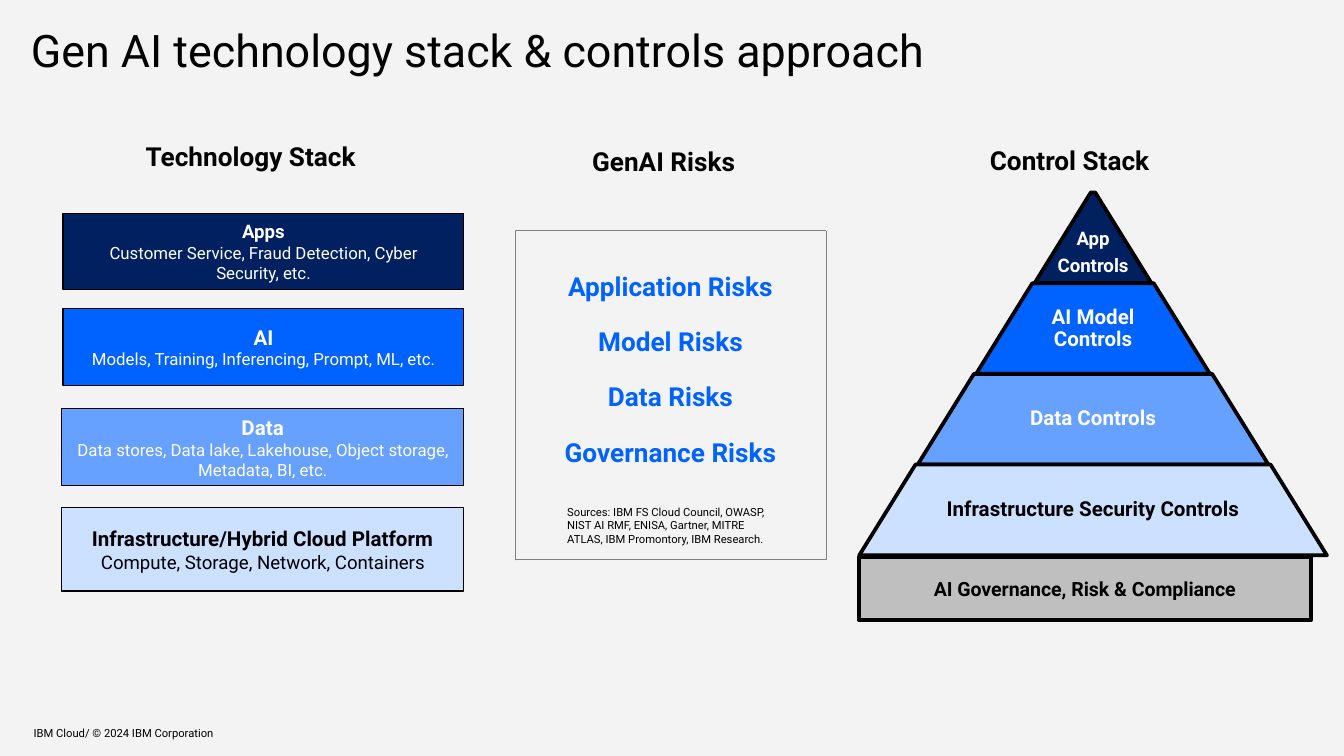
from collections import namedtuple
from pptx import Presentation
from pptx.dml.color import RGBColor
from pptx.enum.dml import MSO_LINE
from pptx.enum.shapes import MSO_SHAPE
from pptx.enum.text import MSO_ANCHOR, MSO_AUTO_SIZE, PP_ALIGN
from pptx.util import Inches, Pt

COLORS = {
    "background": "F3F3F3", "black": "000000", "white": "FFFFFF",
    "navy": "002060", "blue": "0062FF", "sky": "66A1FF", "pale": "CCE0FF",
    "silver": "BFBFBF", "gray": "808080",
}
COLUMNS, ROWS = 100, 56.25
CELL = Inches(0.1)
DEFAULT_INSETS = (1, 0.5, 1, 0.5)

Box = namedtuple("Box", "left top width height")
Line = namedtuple("Line", "text size color bold")


def color(name):
    """Return the named color."""
    return RGBColor.from_string(COLORS[name])


def within(box, left, top, width, height):
    """Return a box placed from the corner of another box."""
    return Box(box.left + left, box.top + top, width, height)


def emu(box):
    """Convert grid cells to slide lengths."""
    return [round(length * CELL) for length in box]


def write(shape, lines, align=PP_ALIGN.CENTER, anchor=MSO_ANCHOR.TOP,
          insets=DEFAULT_INSETS, line_spacing=None, space_after=None):
    """Write one paragraph for each line into a shape."""
    frame = shape.text_frame
    frame.word_wrap = True
    frame.auto_size = MSO_AUTO_SIZE.NONE
    frame.vertical_anchor = anchor
    (frame.margin_left, frame.margin_top,
     frame.margin_right, frame.margin_bottom) = emu(insets)
    for index, line in enumerate(lines):
        paragraph = frame.add_paragraph() if index else frame.paragraphs[0]
        paragraph.text = line.text
        paragraph.alignment = align
        paragraph.line_spacing = line_spacing
        paragraph.space_after = space_after
        paragraph.font.name = "Roboto"
        paragraph.font.size = Pt(line.size)
        paragraph.font.bold = line.bold
        paragraph.font.color.rgb = color(line.color)


def add_text(slide, box, lines, **options):
    """Add a text box."""
    write(slide.shapes.add_textbox(*emu(box)), lines, **options)


def add_block(slide, kind, box, fill, outline, weight):
    """Add an outlined shape, filled when a fill is named."""
    shape = slide.shapes.add_shape(kind, *emu(box))
    shape.shadow.inherit = False
    if fill:
        shape.fill.solid()
        shape.fill.fore_color.rgb = color(fill)
    else:
        shape.fill.background()
    shape.line.color.rgb = color(outline)
    shape.line.width = Pt(weight)
    return shape


def add_heading(slide, box, text):
    """Add a bold heading at the top of a region."""
    add_text(slide, within(box, 0, 0, 23.1, 3.4), [Line(text, 14, "black", True)],
             insets=(0, 0.5, 1, 0.5))


def add_title(slide, box):
    """Place and format the title placeholder."""
    title = slide.shapes.title
    title.left, title.top, title.width, title.height = emu(box)
    write(title, [Line("Gen AI technology stack & controls approach", 24, "black", False)],
          align=PP_ALIGN.LEFT, line_spacing=0.9)


def add_technology_stack(slide, box):
    """Stack the four technology layers below their heading."""
    add_heading(slide, within(box, 3, 0, 0, 0), "Technology Stack")
    layers = [
        (0.1, 5.9, 5.7, "navy", "white", "Apps", 10,
         "Customer Service, Fraud Detection, Cyber Security, etc.", 9),
        (0.1, 13, 5.7, "blue", "white", "AI", 11,
         "Models, Training, Inferencing, Prompt, ML, etc.", 9),
        (0, 20.45, 5.7, "sky", "white", "Data", 11,
         "Data stores, Data lake, Lakehouse, Object storage, Metadata, BI, etc.", 9),
        (0, 27.8, 6.2, "pale", "black", "Infrastructure/Hybrid Cloud Platform", 11,
         "Compute, Storage, Network, Containers", 10),
    ]
    for left, top, height, fill, ink, name, name_size, detail, detail_size in layers:
        layer = within(box, left, top, box.width - left, height)
        shape = add_block(slide, MSO_SHAPE.RECTANGLE, layer, fill, "black", 0.75)
        write(shape, [Line(name, name_size, ink, True), Line(detail, detail_size, ink, False)],
              anchor=MSO_ANCHOR.MIDDLE)


def add_risks(slide, box):
    """List the risks and their sources in a dotted frame."""
    add_heading(slide, box, "GenAI Risks")
    frame_box = within(box, 0, 6.85, box.width, 24.5)
    frame = add_block(slide, MSO_SHAPE.RECTANGLE, frame_box, None, "gray", 0.25)
    frame.line.dash_style = MSO_LINE.ROUND_DOT
    for index, subject in enumerate(["Application", "Model", "Data", "Governance"]):
        add_text(slide, within(frame_box, 0, 2.5 + 4.1 * index, box.width, 3.4),
                 [Line(f"{subject} Risks", 14, "blue", True)])
    sources = ("Sources: IBM FS Cloud Council, OWASP, NIST AI RMF, ENISA, Gartner, "
               "MITRE ATLAS, IBM Promontory, IBM Research.")
    add_text(slide, within(frame_box, 2.9, 19.95, 16.8, 4),
             [Line(sources, 6, "black", False)], align=PP_ALIGN.LEFT)


def add_control_stack(slide, box):
    """Build the control pyramid on its governance base."""
    add_heading(slide, within(box, 4.6, 0, 0, 0), "Control Stack")
    step, height, pitch = box.width / 4, 6.75, 6.75
    tiers = [
        (["App", "Controls"], 10, "navy", "white", 1.1),
        (["AI Model Controls"], 11, "blue", "white", 0),
        (["Data Controls"], 11, "sky", "white", 0),
        (["Infrastructure Security Controls"], 11, "pale", "black", 0),
    ]
    for index, (texts, size, fill, ink, drop) in enumerate(tiers):
        width = step * (index + 1)
        top = 4.1 + pitch * index
        tier = within(box, (box.width - width) / 2, top, width, height)
        shape = add_block(slide, MSO_SHAPE.TRAPEZOID, tier, fill, "black", 2)
        shape.adjustments[0] = 0.62
        text_width = max(step, 0.65 * width)
        add_text(slide, within(box, (box.width - text_width) / 2, top + drop, text_width, height),
                 [Line(text, size, ink, True) for text in texts],
                 anchor=MSO_ANCHOR.MIDDLE, insets=(0.2,) * 4,
                 line_spacing=0.9, space_after=Pt(3.5))
    base = within(box, 0, 31.25, 33.6, 4.7)
    add_block(slide, MSO_SHAPE.RECTANGLE, base, "silver", "black", 2.25)
    add_text(slide, within(base, 0, 1, base.width, 2.8),
             [Line("AI Governance, Risk & Compliance", 10.5, "black", True)])


def add_footer(slide, box):
    """Add the copyright line."""
    add_text(slide, box, [Line("IBM Cloud/ © 2024 IBM Corporation", 6, "black", False)],
             align=PP_ALIGN.LEFT, anchor=MSO_ANCHOR.MIDDLE, insets=(0,) * 4)


def main():
    """Build and save the slide."""
    presentation = Presentation()
    presentation.slide_width = round(COLUMNS * CELL)
    presentation.slide_height = round(ROWS * CELL)
    slide = presentation.slides.add_slide(presentation.slide_layouts.get_by_name("Title Only"))
    slide.background.fill.solid()
    slide.background.fill.fore_color.rgb = color("background")
    add_title(slide, Box(1.3, 1.65, 96.9, 8.8))
    add_technology_stack(slide, Box(4.6, 9.97, 29.9, 34))
    add_risks(slide, Box(38.32, 10.3, 23.15, 31.35))
    add_control_stack(slide, Box(63.93, 10.22, 34.8, 36))
    add_footer(slide, Box(2.5, 53.65, 45, 1.8))
    presentation.save("out.pptx")


if __name__ == "__main__":
    main()
